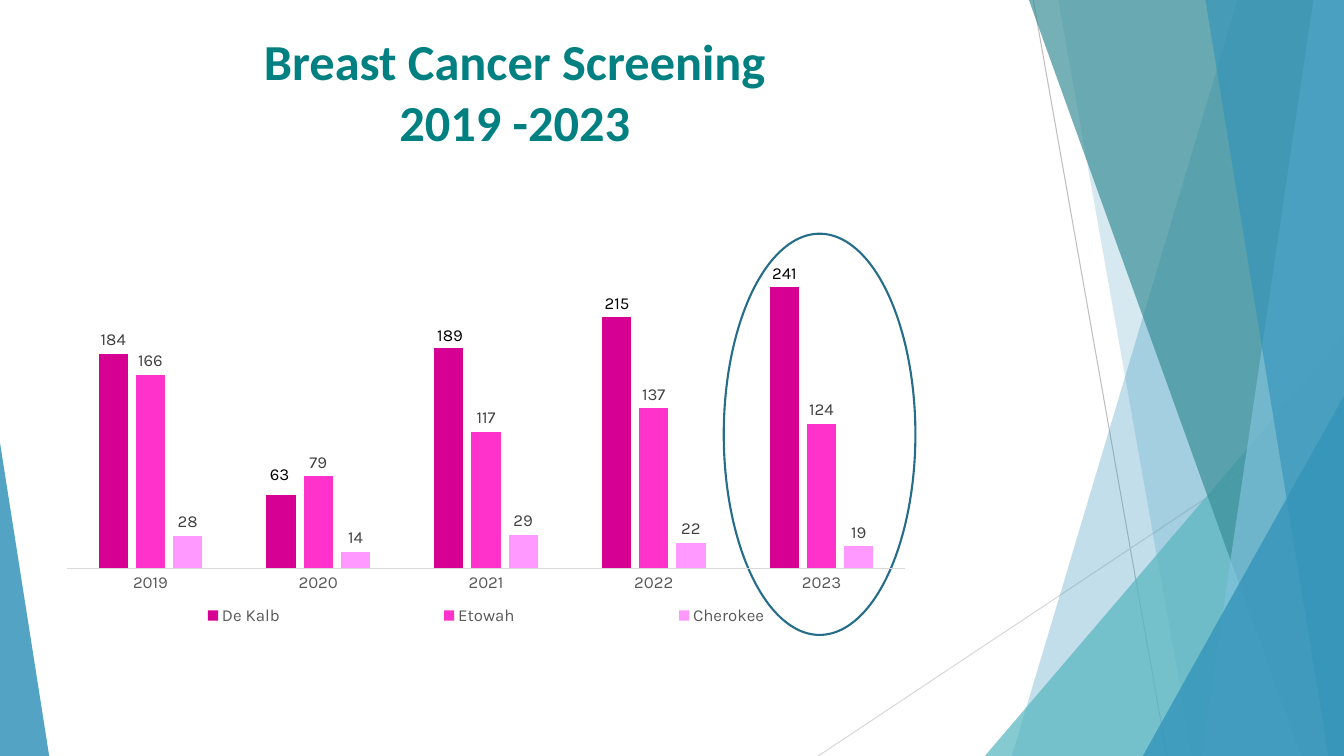
from lxml import etree
from pptx import Presentation
from pptx.chart.data import CategoryChartData
from pptx.dml.color import RGBColor
from pptx.enum.chart import XL_CHART_TYPE as ChartType, XL_LABEL_POSITION as LabelPosition
from pptx.enum.chart import XL_LEGEND_POSITION as LegendPosition, XL_TICK_MARK as TickMark
from pptx.enum.shapes import MSO_CONNECTOR as Connector, MSO_SHAPE as Shape
from pptx.enum.text import MSO_ANCHOR as Anchor, PP_ALIGN as Align
from pptx.oxml.ns import qn
from pptx.util import Cm, Pt

# Content
TITLE = "Breast Cancer Screening\n2019 -2023"
YEARS = ["2019", "2020", "2021", "2022", "2023"]
COUNTIES = {
    "De Kalb": [184, 63, 189, 215, 241],
    "Etowah": [166, 79, 117, 137, 124],
    "Cherokee": [28, 14, 29, 22, 19],
}
COLORS = {
    "De Kalb": "D60093", "Etowah": "FF33CC", "Cherokee": "FF99FF",
    "title": "008080", "ring": "266D8A", "black": "000000",
    "label": "404040", "axis text": "595959", "axis": "D9D9D9", "hairline": "BFBFBF",
    "blue": "3494BA", "aqua": "58B6C0", "teal": "3A8F98", "sky": "7FC1DB",
}
WIDTH, HEIGHT = 33.87, 19.05

# Decoration in cm
HAIRLINES = [(26.04, 0, 29.41, HEIGHT, "hairline"), (WIDTH, 10.24, 20.62, HEIGHT, "axis")]
# Bands run to the right edge: left x at top, left x at bottom, colour, opacity %
# Triangles stand on the bottom edge: left, top, width, apex, colour, opacity %
FACETS = [
    ("band", 31.19, 25.5, "blue", 30),
    ("band", 26.67, 30.05, "blue", 20),
    ("triangle", 24.82, 8.46, 9.05, 1, "aqua", 72),
    ("band", 25.93, 32.79, "teal", 70),
    ("band", 33.1, 30.28, "sky", 70),
    ("band", 30.38, 33.48, "blue", 65),
    ("triangle", 28.8, 9.98, 5.07, 1, "blue", 80),
    ("triangle", 0, 11.15, 1.24, 0, "blue", 85),
]

# Hand-placed De Kalb labels: one per year from 2020
LABEL_LEFT, LABEL_STEP = 6.55, 4.22
LABEL_TOPS = [11.56, 8.05, 7.26, 6.5]


def color(name):
    return RGBColor.from_string(COLORS[name])


def set_font(font, size, name, color_name, bold=False):
    font.size, font.name, font.bold = Pt(size), name, bold
    font.color.rgb = color(color_name)


def fill_facet(shape, color_name, opacity):
    shape.shadow.inherit = False
    shape.line.fill.background()
    shape.fill.solid()
    shape.fill.fore_color.rgb = color(color_name)
    fill_color = shape.fill._xPr.find(qn("a:solidFill"))[0]
    etree.SubElement(fill_color, qn("a:alpha"), val=str(opacity * 1000))


def add_text(slide, text, left, top, width, height):
    frame = slide.shapes.add_textbox(Cm(left), Cm(top), Cm(width), Cm(height)).text_frame
    frame.word_wrap = True
    frame.vertical_anchor = Anchor.TOP
    paragraph = frame.paragraphs[0]
    paragraph.text = text
    return paragraph


def set_layout(parent, index, inner=False, **fractions):
    """Place a chart part by fractions of the chart's size."""
    for old in parent.findall(qn("c:layout")):
        parent.remove(old)
    layout = etree.Element(qn("c:layout"))
    manual = etree.SubElement(layout, qn("c:manualLayout"))
    if inner:
        etree.SubElement(manual, qn("c:layoutTarget"), val="inner")
    for mode in ("xMode", "yMode"):
        etree.SubElement(manual, qn("c:" + mode), val="edge")
    for key, value in fractions.items():
        etree.SubElement(manual, qn("c:" + key), val=str(value))
    parent.insert(index, layout)


def add_decoration(slide):
    for x1, y1, x2, y2, color_name in HAIRLINES:
        line = slide.shapes.add_connector(Connector.STRAIGHT, Cm(x1), Cm(y1), Cm(x2), Cm(y2))
        line.line.color.rgb = color(color_name)
        line.line.width = Pt(0.75)
        etree.SubElement(line._element.spPr, qn("a:effectLst"))
    for kind, *place, color_name, opacity in FACETS:
        if kind == "band":
            top_x, bottom_x = place
            builder = slide.shapes.build_freeform(Cm(top_x), Cm(0))
            corners = [(WIDTH, 0), (WIDTH, HEIGHT), (bottom_x, HEIGHT)]
            builder.add_line_segments([(Cm(x), Cm(y)) for x, y in corners], close=True)
            facet = builder.convert_to_shape()
        else:
            left, top, width, apex = place
            facet = slide.shapes.add_shape(
                Shape.ISOSCELES_TRIANGLE, Cm(left), Cm(top), Cm(width), Cm(HEIGHT - top))
            facet.adjustments[0] = apex
        fill_facet(facet, color_name, opacity)


def add_screening_chart(slide):
    data = CategoryChartData(number_format="#,##0")
    data.categories = YEARS
    for county, counts in COUNTIES.items():
        data.add_series(county, counts)
    chart = slide.shapes.add_chart(
        ChartType.COLUMN_CLUSTERED, Cm(1.24), Cm(5.28), Cm(22.02), Cm(10.77), data).chart
    set_font(chart.font, 10, "Karla", "black")
    chart.has_title = False

    # Transparent background keeps the ring visible
    space = chart._chartSpace
    background = etree.Element(qn("c:spPr"))
    etree.SubElement(background, qn("a:noFill"))
    etree.SubElement(etree.SubElement(background, qn("a:ln")), qn("a:noFill"))
    space.find(qn("c:chart")).addnext(background)

    # Axes
    years, counts = chart.category_axis, chart.value_axis
    years.major_tick_mark = years.minor_tick_mark = TickMark.NONE
    years.format.line.color.rgb = color("axis")
    years.format.line.width = Pt(0.75)
    set_font(years.tick_labels.font, 12, "Karla", "axis text")
    counts.minimum_scale, counts.maximum_scale = 0, 300
    counts.has_major_gridlines = False
    counts.visible = False

    # Legend
    chart.has_legend = True
    chart.legend.position = LegendPosition.BOTTOM
    chart.legend.include_in_layout = False
    set_font(chart.legend.font, 12, "Karla", "axis text")
    set_layout(chart.legend._element, 1, x=0, y=0.91, w=1, h=0.08)
    set_layout(space.find(".//" + qn("c:plotArea")), 0, True, x=0.02, y=0.02, w=0.96, h=0.82)

    # Columns and their labels
    plot = chart.plots[0]
    plot.gap_width, plot.overlap, plot.vary_by_categories = 219, -27, False
    for series in plot.series:
        series.format.fill.solid()
        series.format.fill.fore_color.rgb = color(series.name)
        series.invert_if_negative = False
        labels = series.data_labels
        if series.name == "De Kalb":
            labels.show_value = False
            labels = series.points[0].data_label
        else:
            labels.show_value = True
        set_font(labels.font, 12, "Karla", "label")
        labels.position = LabelPosition.OUTSIDE_END


def main():
    presentation = Presentation()
    presentation.slide_width, presentation.slide_height = Cm(WIDTH), Cm(HEIGHT)
    slide = presentation.slides.add_slide(presentation.slide_layouts[6])
    add_decoration(slide)

    # Title
    title = add_text(slide, TITLE, 0.2, 0.64, 25.55, 3.81)
    title.alignment = Align.CENTER
    set_font(title.font, 36, "Calibri", "title", bold=True)

    # Ring around the last year
    ring = slide.shapes.add_shape(Shape.OVAL, Cm(18.24), Cm(5.89), Cm(4.83), Cm(10.11))
    ring.shadow.inherit = False
    ring.fill.background()
    ring.line.color.rgb = color("ring")
    ring.line.width = Pt(1.5)

    add_screening_chart(slide)
    for index, (count, top) in enumerate(zip(COUNTIES["De Kalb"][1:], LABEL_TOPS)):
        label = add_text(slide, str(count), LABEL_LEFT + index * LABEL_STEP, top, 1.42, 0.76)
        set_font(label.font, 12, "Karla", "black")

    presentation.save("out.pptx")


if __name__ == "__main__":
    main()
